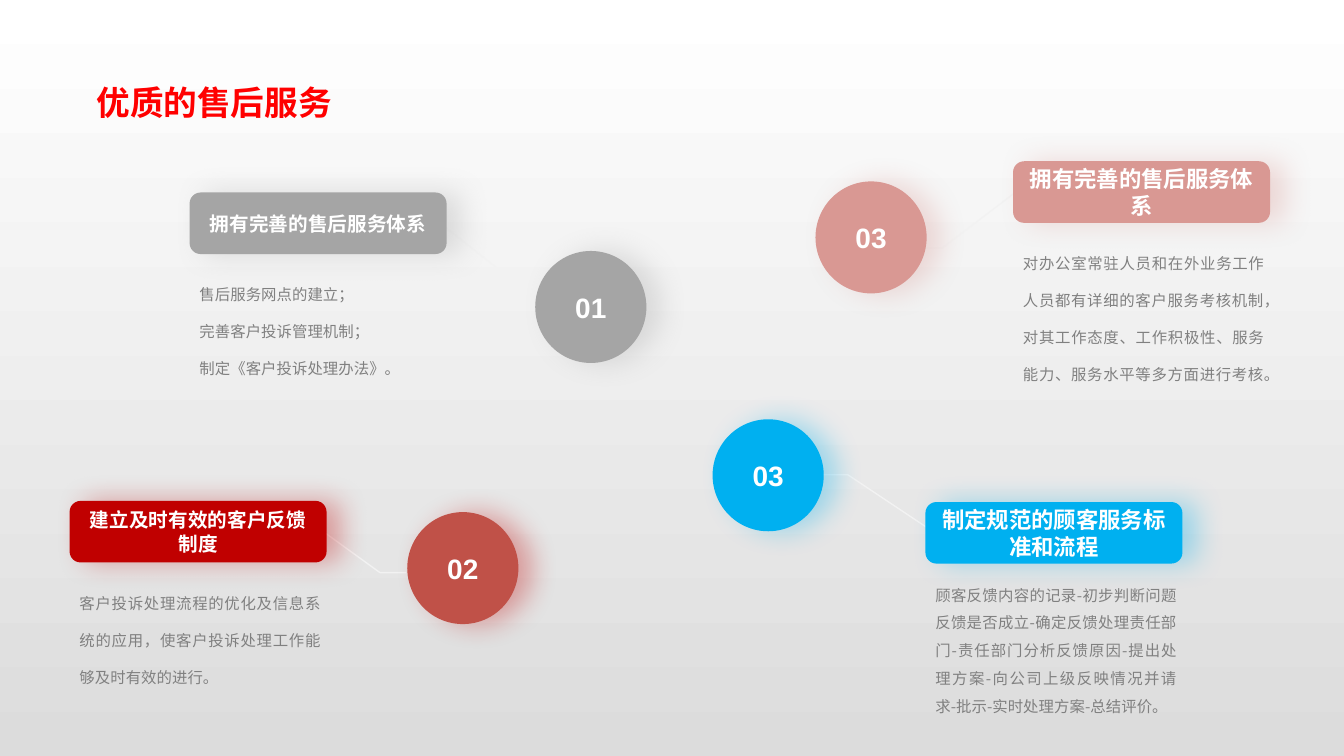
from dataclasses import dataclass

from lxml.etree import SubElement
from pptx import Presentation
from pptx.dml.color import RGBColor
from pptx.enum.shapes import MSO_SHAPE
from pptx.enum.text import MSO_ANCHOR, PP_ALIGN
from pptx.oxml.ns import qn
from pptx.shapes.autoshape import Shape
from pptx.slide import Slide
from pptx.util import Pt

CHINESE_FONT = "Noto Sans CJK SC"
NUMBER_FONT = "Arial"
WHITE = "FFFFFF"
BODY_GREY = "808080"
LINE_GREY = "F2F2F2"
HEADING_SIZE = (183.6, 44)
CIRCLE_SIZE = (79.4, 80)
BODY_SIZE = (186.5, 116.6)
BODY_OFFSET = 49.7

Point = tuple[float, float]


@dataclass
class TextStyle:
    size: float
    color: str
    font: str = CHINESE_FONT
    bold: bool = True
    alignment: PP_ALIGN = PP_ALIGN.CENTER
    line_spacing: float = 1


@dataclass
class Service:
    number: str
    heading: str
    body: list[str]
    heading_at: Point
    circle_at: Point
    line: list[Point]
    color: str
    circle_color: str
    heading_size: float
    body_spacing: float = 2


SERVICES = [
    Service("02", "建立及时有效的客户反馈制度",
            ["客户投诉处理流程的优化及信息系统的应用，使客户投诉处理工作能够及时有效的进行。"],
            (49.7, 357.8), (290.9, 365.8),
            [(290.2, 409), (271.4, 409), (211.7, 365.8)],
            "C00000", "C05148", 14),
    Service("01", "拥有完善的售后服务体系",
            ["售后服务网点的建立；", "完善客户投诉管理机制；", "制定《客户投诉处理办法》。"],
            (135.4, 137.5), (382.3, 179.3),
            [(393.1, 204.5), (371.5, 204.5), (303.1, 150.5)],
            "A5A5A5", "A5A5A5", 14),
    Service("03", "制定规范的顾客服务标准和流程",
            ["顾客反馈内容的记录-初步判断问题反馈是否成立-确定反馈处理责任部门-责任部门分析反馈原因-"
             "提出处理方案-向公司上级反映情况并请求-批示-实时处理方案-总结评价。"],
            (661, 358.6), (509, 299.5),
            [(581.8, 339.1), (605.5, 339.1), (681.1, 389.5)],
            "00B0F0", "00B0F0", 16, 1.5),
    Service("03", "拥有完善的售后服务体系",
            ["对办公室常驻人员和在外业务工作人员都有详细的客户服务考核机制，"
             "对其工作态度、工作积极性、服务能力、服务水平等多方面进行考核。"],
            (723.6, 115.2), (582.5, 129.6),
            [(649.4, 177.1), (673.2, 177.1), (748.8, 119.5)],
            "D99893", "D99893", 16),
]


def rgb(color: str) -> RGBColor:
    return RGBColor.from_string(color)


def write(shape: Shape, lines: list[str], style: TextStyle) -> None:
    frame = shape.text_frame
    frame.word_wrap = True
    frame.text = "\n".join(lines)
    for paragraph in frame.paragraphs:
        paragraph.alignment = style.alignment
        paragraph.line_spacing = style.line_spacing
        font = paragraph.font
        font.size = Pt(style.size)
        font.bold = style.bold
        font.color.rgb = rgb(style.color)
        font.name = style.font
        properties = paragraph._p.pPr.find(qn("a:defRPr"))
        SubElement(properties, qn("a:ea"), typeface=style.font)


def add_glow_shadow(shape: Shape, color: str) -> None:
    shape.shadow.inherit = False
    effects = shape._element.spPr.find(qn("a:effectLst"))
    shadow = SubElement(effects, qn("a:outerShdw"), blurRad=str(Pt(20)),
                        dist=str(Pt(10)), dir="0", algn="ctr", rotWithShape="0")
    shade = SubElement(shadow, qn("a:srgbClr"), val=color)
    SubElement(shade, qn("a:alpha"), val="32000")


def add_label(slide: Slide, preset: MSO_SHAPE, position: Point, size: Point,
              fill: str, shadow: str, text: str, style: TextStyle) -> Shape:
    shape = slide.shapes.add_shape(preset, *map(Pt, position + size))
    shape.fill.solid()
    shape.fill.fore_color.rgb = rgb(fill)
    shape.line.fill.background()
    add_glow_shadow(shape, shadow)
    shape.text_frame.vertical_anchor = MSO_ANCHOR.MIDDLE
    write(shape, [text], style)
    return shape


def add_text(slide: Slide, position: Point, size: Point,
             lines: list[str], style: TextStyle) -> None:
    write(slide.shapes.add_textbox(*map(Pt, position + size)), lines, style)


def add_elbow(slide: Slide, points: list[Point]) -> None:
    start, *others = [(Pt(x), Pt(y)) for x, y in points]
    builder = slide.shapes.build_freeform(*start)
    builder.add_line_segments(others, close=False)
    shape = builder.convert_to_shape()
    shape.shadow.inherit = False
    shape.fill.background()
    shape.line.color.rgb = rgb(LINE_GREY)
    shape.line.width = Pt(1)


def add_service(slide: Slide, service: Service) -> None:
    add_elbow(slide, service.line)
    add_label(slide, MSO_SHAPE.OVAL, service.circle_at, CIRCLE_SIZE,
              service.circle_color, service.color, service.number,
              TextStyle(20, WHITE, NUMBER_FONT))
    left, top = service.heading_at
    add_text(slide, (left, top + BODY_OFFSET), BODY_SIZE, service.body,
             TextStyle(11, BODY_GREY, bold=False, alignment=PP_ALIGN.JUSTIFY,
                       line_spacing=service.body_spacing))
    heading = add_label(slide, MSO_SHAPE.ROUNDED_RECTANGLE, service.heading_at,
                        HEADING_SIZE, service.color, service.color,
                        service.heading, TextStyle(service.heading_size, WHITE))
    heading.adjustments[0] = 0.18


def paint_background(slide: Slide) -> None:
    fill = slide.background.fill
    fill.gradient()
    fill.gradient_angle = 270
    for stop, position, color in zip(fill.gradient_stops, (0, 1), (WHITE, "DCDCDC")):
        stop.position = position
        stop.color.rgb = rgb(color)


def main() -> None:
    presentation = Presentation()
    presentation.slide_width = Pt(960)
    presentation.slide_height = Pt(540)
    slide = presentation.slides.add_slide(presentation.slide_layouts[6])
    paint_background(slide)
    for service in SERVICES:
        add_service(slide, service)
    add_text(slide, (61.9, 54.7), (272.2, 36), ["优质的售后服务"],
             TextStyle(24, "FF0000", alignment=PP_ALIGN.LEFT))
    presentation.save("out.pptx")


if __name__ == "__main__":
    main()
